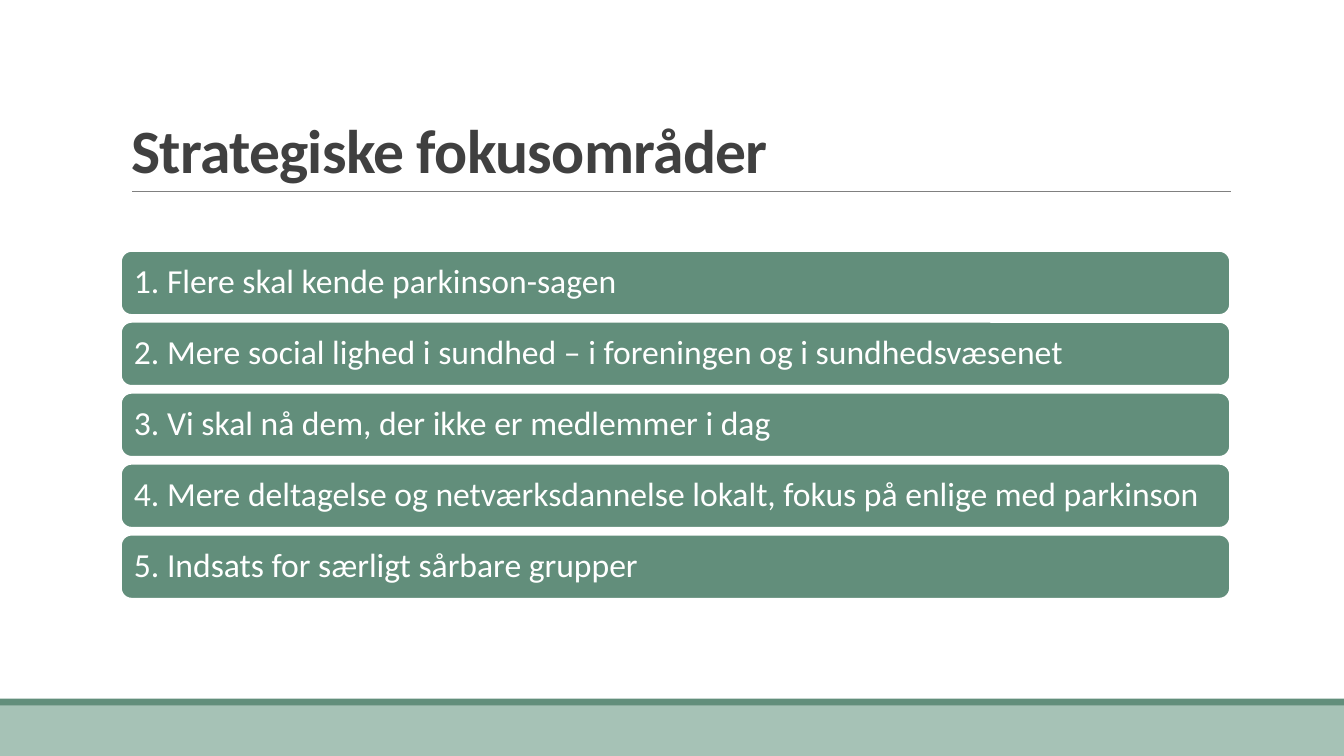
import pptx
import pptx.util
import pptx.dml.color
import pptx.enum.shapes
import pptx.enum.text

WIDTH, HEIGHT = 13.33, 7.5
FONT = "Calibri"
COLORS = {"band": "A6C2B6", "green": "628E7B", "rule": "808080",
          "title": "404040", "white": "FFFFFF"}
FOCUS_AREAS = [
    "1. Flere skal kende parkinson-sagen",
    "2. Mere social lighed i sundhed – i foreningen og i sundhedsvæsenet",
    "3. Vi skal nå dem, der ikke er medlemmer i dag",
    "4. Mere deltagelse og netværksdannelse lokalt, fokus på enlige med parkinson",
    "5. Indsats for særligt sårbare grupper",
]


def rgb(name):
    """Return the named palette colour."""
    return pptx.dml.color.RGBColor.from_string(COLORS[name])


def inches(*lengths):
    """Convert lengths in inches to slide units."""
    return [pptx.util.Inches(length) for length in lengths]


def format_text(sp, text, size, color, spacing, bold=False):
    """Write one left-aligned paragraph and return it."""
    tf = sp.text_frame
    tf.word_wrap = True
    tf.auto_size = pptx.enum.text.MSO_AUTO_SIZE.NONE
    p = tf.paragraphs[0]
    p.text = text
    p.alignment = pptx.enum.text.PP_ALIGN.LEFT
    p.line_spacing = spacing
    p.font.name = FONT
    p.font.size = pptx.util.Pt(size)
    p.font.bold = bold
    p.font.color.rgb = rgb(color)
    return p


def add_block(s, kind, box, fill):
    """Add a filled shape without outline or shadow."""
    sp = s.shapes.add_shape(kind, *inches(*box))
    sp.shadow.inherit = False
    sp.fill.solid()
    sp.fill.fore_color.rgb = rgb(fill)
    sp.line.fill.background()
    return sp


def add_footer(s, left, top, width, height):
    """Add the bottom band with a darker stripe along its top."""
    stripe = height / 8
    rect = pptx.enum.shapes.MSO_SHAPE.RECTANGLE
    add_block(s, rect, (left, top + stripe, width, height - stripe), "band")
    add_block(s, rect, (left, top, width, stripe), "green")


def add_title(s, left, top, width, height):
    """Place the title at the foot of its box, above a thin rule."""
    title = s.shapes.title
    title.left, title.top, title.width, title.height = inches(left, top, width, height)
    title.text_frame.vertical_anchor = pptx.enum.text.MSO_ANCHOR.BOTTOM
    p = format_text(title, "Strategiske fokusområder", 44, "title", 0.85, bold=True)
    p.runs[0].font._element.set("spc", "-50")

    bottom = top + height
    rule = s.shapes.add_connector(
        pptx.enum.shapes.MSO_CONNECTOR.STRAIGHT,
        *inches(left + 0.11, bottom, left + width + 0.01, bottom))
    rule.line.color.rgb = rgb("rule")
    rule.line.width = pptx.util.Pt(0.5)
    rule._element.spPr.add_effectLst() if hasattr(rule._element.spPr, "add_effectLst") \
        else rule._element.spPr.get_or_add_ln().addnext(
            pptx.oxml.xmlchemy.OxmlElement("a:effectLst"))


def add_focus_areas(s, left, top, width, height):
    """Stack the focus areas as equal rounded bars filling the box."""
    gap = 0.02 * height
    bar = (height - gap * (len(FOCUS_AREAS) - 1)) / len(FOCUS_AREAS)
    for i, text in enumerate(FOCUS_AREAS):
        box = (left, top + i * (bar + gap), width, bar)
        sp = add_block(s, pptx.enum.shapes.MSO_SHAPE.ROUNDED_RECTANGLE, box, "green")
        sp.line.color.rgb = rgb("white")
        sp.line.width = pptx.util.Pt(1.25)
        tf = sp.text_frame
        tf.margin_left = tf.margin_right = pptx.util.Inches(0.1)
        tf.vertical_anchor = pptx.enum.text.MSO_ANCHOR.MIDDLE
        format_text(sp, text, 24, "white", 0.9)


def main():
    """Build and save the slide."""
    prs = pptx.Presentation()
    prs.slide_width, prs.slide_height = inches(WIDTH, HEIGHT)
    s = prs.slides.add_slide(prs.slide_layouts[5])
    add_footer(s, 0, HEIGHT - 0.57, WIDTH, 0.57)
    add_title(s, 1.2, 0.31, 11, 1.59)
    add_focus_areas(s, 1.2, 2.49, 11, 3.45)
    prs.save("out.pptx")


if __name__ == "__main__":
    main()
